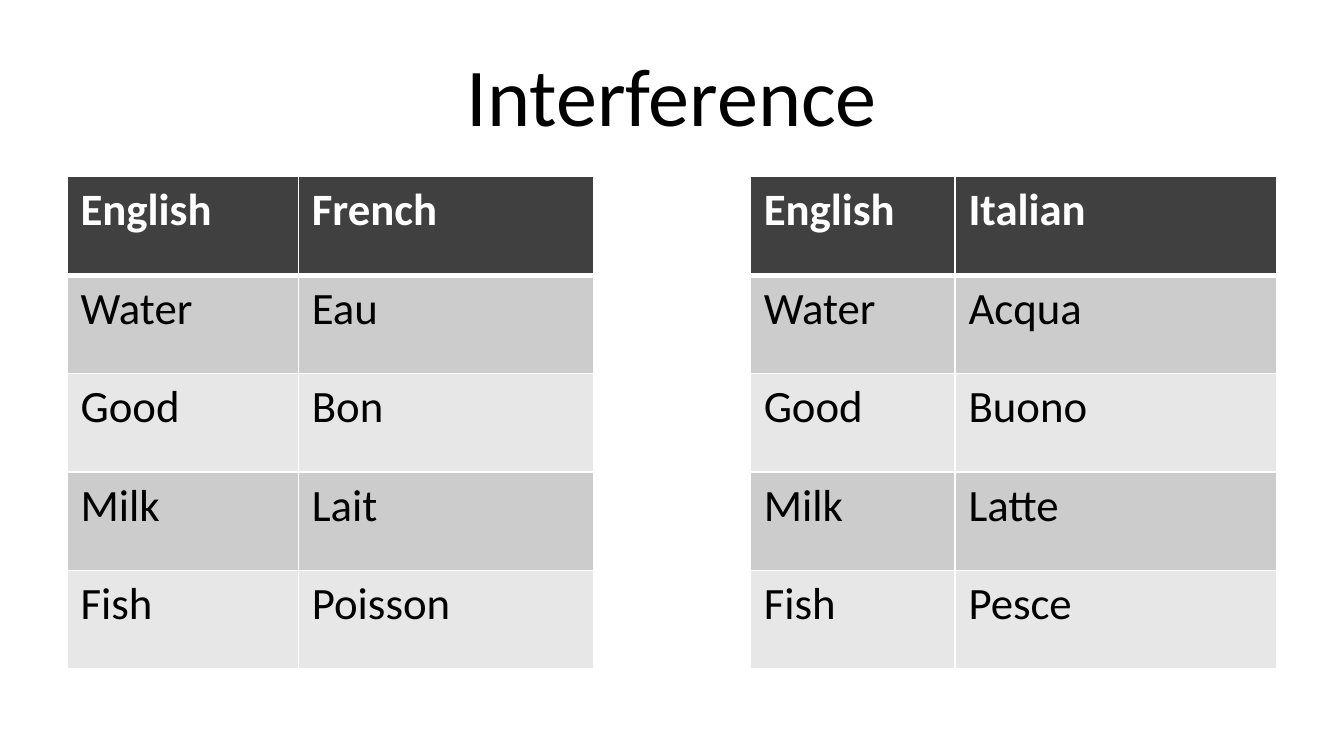
from dataclasses import dataclass

from lxml.etree import SubElement
from pptx import Presentation
from pptx.dml.color import RGBColor
from pptx.enum.text import MSO_ANCHOR, PP_ALIGN
from pptx.oxml.ns import qn
from pptx.util import Cm, Pt


@dataclass(frozen=True)
class Theme:
    font: str = "Calibri"
    title_size: int = 44
    cell_size: int = 24
    text: str = "000000"
    white: str = "FFFFFF"
    header: str = "404040"
    bands: tuple = ("CCCCCC", "E7E7E7")


theme = Theme()


def write_text(frame, text, size=theme.cell_size, color=theme.text, bold=False,
               align=PP_ALIGN.LEFT):
    paragraph = frame.paragraphs[0]
    paragraph.alignment = align
    run = paragraph.add_run()
    run.text = text
    run.font.name = theme.font
    run.font.size = Pt(size)
    run.font.bold = bold
    run.font.color.rgb = RGBColor.from_string(color)


def fill_cell(cell, color, top_width, bottom_width):
    """Give a cell its white borders and its fill; borders come first in the XML."""
    properties = cell._tc.get_or_add_tcPr()
    widths = {"a:lnL": 1, "a:lnR": 1, "a:lnT": top_width, "a:lnB": bottom_width}
    for tag, width in widths.items():
        line = SubElement(properties, qn(tag), w=str(Pt(width)))
        solid = SubElement(line, qn("a:solidFill"))
        SubElement(solid, qn("a:srgbClr"), val=theme.white)
    cell.fill.solid()
    cell.fill.fore_color.rgb = RGBColor.from_string(color)


presentation = Presentation()
presentation.slide_width = Cm(25.4)
presentation.slide_height = Cm(14.29)
slide = presentation.slides.add_slide(presentation.slide_layouts[6])

# Title
title = slide.shapes.add_textbox(Cm(1.27), Cm(0.58), Cm(22.86), Cm(2.39))
title.text_frame.word_wrap = True
title.text_frame.vertical_anchor = MSO_ANCHOR.MIDDLE
write_text(title.text_frame, "Interference", size=theme.title_size,
           align=PP_ALIGN.CENTER)

# Vocabulary tables: left edge, column widths, translations
english = ["English", "Water", "Good", "Milk", "Fish"]
vocabularies = [
    (1.27, (4.37, 5.58), ["French", "Eau", "Bon", "Lait", "Poisson"]),
    (14.18, (3.87, 6.08), ["Italian", "Acqua", "Buono", "Latte", "Pesce"]),
]
row_height = 1.86

for left, column_widths, translations in vocabularies:
    table = slide.shapes.add_table(
        len(english), 2, Cm(left), Cm(3.34),
        Cm(sum(column_widths)), Cm(row_height * len(english))).table
    for column, width in zip(table.columns, column_widths):
        column.width = Cm(width)

    for row_index, words in enumerate(zip(english, translations)):
        table.rows[row_index].height = Cm(row_height)
        is_header = row_index == 0
        fill = theme.header if is_header else theme.bands[(row_index - 1) % 2]
        for column_index, word in enumerate(words):
            cell = table.cell(row_index, column_index)
            fill_cell(cell, fill, top_width=3 if row_index == 1 else 1,
                      bottom_width=3 if is_header else 1)
            write_text(cell.text_frame, word, bold=is_header,
                       color=theme.white if is_header else theme.text)

presentation.save("out.pptx")
